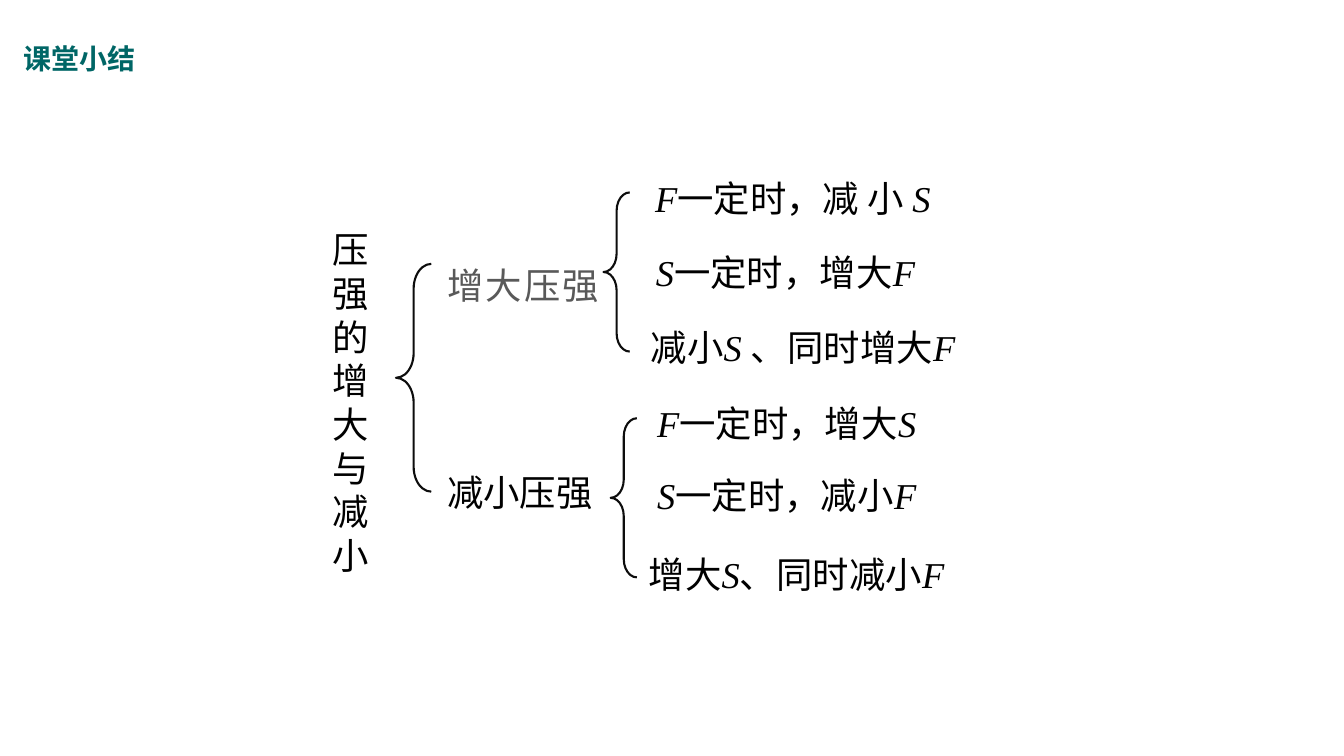
from dataclasses import dataclass
from itertools import groupby

from lxml import etree
from pptx import Presentation
from pptx.dml.color import RGBColor
from pptx.enum.shapes import MSO_SHAPE
from pptx.enum.text import MSO_ANCHOR, MSO_AUTO_SIZE, PP_ALIGN
from pptx.oxml.ns import qn
from pptx.util import Cm, Pt

BRACE = MSO_SHAPE.LEFT_BRACE
TOP = MSO_ANCHOR.TOP
LEFT = PP_ALIGN.LEFT
GROW = MSO_AUTO_SIZE.SHAPE_TO_FIT_TEXT
FIXED = MSO_AUTO_SIZE.NONE


@dataclass(frozen=True)
class Theme:
    title: RGBColor = RGBColor(0x00, 0x66, 0x66)
    ink: RGBColor = RGBColor(0x00, 0x00, 0x00)
    soft: RGBColor = RGBColor(0x59, 0x59, 0x59)
    line: RGBColor = RGBColor(0x0D, 0x0D, 0x0D)
    head: str = "Arial"
    text: str = "Times New Roman"
    big: Pt = Pt(26)
    small: Pt = Pt(20)
    rule: Pt = Pt(1.5)


THEME = Theme()

# Each row: shift right and down from its brace (cm), then its wording.
RAISE = [
    (1.05, -0.53, "F一定时，减 小 S"),
    (1.07, 1.32, "S一定时，增大F"),
    (0.94, 3.23, "减小S 、同时增大F"),
]
LOWER = [
    (0.92, -0.56, "F一定时，增大S"),
    (0.92, 1.25, "S一定时，减小F"),
    (0.71, 3.25, "增大S、同时减小F"),
]


def place(shape, left, top, width, height):
    shape.left, shape.top = Cm(left), Cm(top)
    shape.width, shape.height = Cm(width), Cm(height)


def style(par, face, size, color, bold=False):
    font = par.font
    font.name, font.size, font.bold = face, size, bold
    font.color.rgb = color


def add_title(slide, text, left, top, width, height):
    title = slide.shapes.title
    place(title, left, top, width, height)
    frame = title.text_frame
    frame.text = text
    frame.vertical_anchor = TOP
    frame.auto_size = GROW
    par = frame.paragraphs[0]
    par.alignment = LEFT
    style(par, THEME.head, THEME.small, THEME.title, True)


def add_topic(slide, text, left, top, width, height):
    """Fill the body placeholder with an unbulleted, widely spaced topic."""
    body = slide.placeholders[1]
    place(body, left, top, width, height)
    frame = body.text_frame
    frame.text = text
    frame.auto_size = FIXED
    par = frame.paragraphs[0]
    props = par._p.get_or_add_pPr()
    props.set("marL", "0")
    props.set("indent", "0")
    etree.SubElement(props, qn("a:buNone"))
    par.line_spacing = 1.3
    par.space_before, par.space_after = Pt(0), Pt(10)
    style(par, THEME.text, THEME.big, THEME.soft)
    par.runs[0]._r.get_or_add_rPr().set("spc", "150")


def add_label(slide, text, left, top, width, height=1.37):
    """Add a text box in which the symbols F and S are italic."""
    box = slide.shapes.add_textbox(Cm(left), Cm(top), Cm(width), Cm(height))
    frame = box.text_frame
    frame.word_wrap = True
    frame.auto_size = GROW
    par = frame.paragraphs[0]
    style(par, THEME.text, THEME.big, THEME.ink)
    for symbol, chars in groupby(text, lambda char: char in "FS"):
        run = par.add_run()
        run.text = "".join(chars)
        if symbol:
            run.font.italic = True


def add_brace(slide, left, top, width, height):
    brace = slide.shapes.add_shape(
        BRACE, Cm(left), Cm(top), Cm(width), Cm(height))
    brace.adjustments[0] = 0.7
    brace.shadow.inherit = False
    brace.fill.background()
    brace.line.color.rgb = THEME.line
    brace.line.width = THEME.rule


def add_branch(slide, rows, left, top, width=0.66, height=4.01):
    """Draw a brace in the given box and its rows to the right."""
    add_brace(slide, left, top, width, height)
    for right, down, text in rows:
        add_label(slide, text, left + right, top + down, 11)


def main():
    deck = Presentation()
    deck.slide_width, deck.slide_height = Cm(33.87), Cm(19.05)
    slide = deck.slides.add_slide(deck.slide_layouts[1])
    add_title(slide, "课堂小结", 0.33, 0.91, 3.61, 1.12)
    add_label(slide, "压强的增大与减小", 8.13, 5.61, 1.14, 9.14)
    add_brace(slide, 9.98, 6.65, 0.89, 5.74)
    add_topic(slide, "增大压强", 11.02, 6.17, 5.41, 2.01)
    add_branch(slide, RAISE, 15.21, 4.85)
    add_label(slide, "减小压强", 11.02, 11.73, 6.5)
    add_branch(slide, LOWER, 15.39, 10.54)
    deck.save("out.pptx")


if __name__ == "__main__":
    main()
